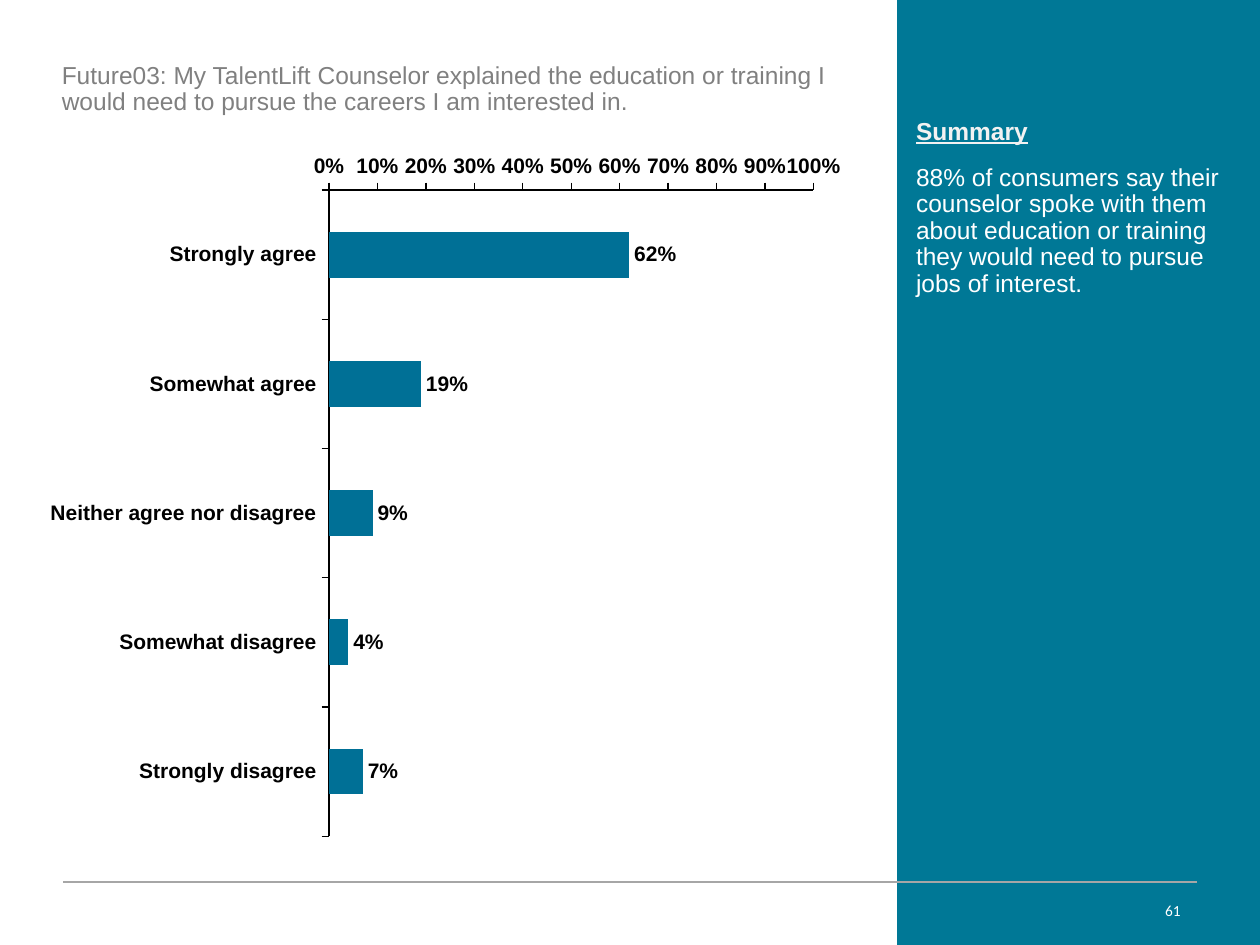
from lxml.etree import SubElement
from pptx import Presentation
from pptx.chart.data import CategoryChartData
from pptx.dml.color import RGBColor
from pptx.enum.chart import XL_CHART_TYPE, XL_LABEL_POSITION, XL_TICK_MARK
from pptx.enum.shapes import MSO_CONNECTOR, MSO_SHAPE
from pptx.enum.text import MSO_ANCHOR, MSO_AUTO_SIZE, PP_ALIGN
from pptx.oxml.ns import qn
from pptx.util import Inches, Pt

QUESTION = ("Future03: My TalentLift Counselor explained the education or training "
            "I would need to pursue the careers I am interested in.")
HEADING = "Summary"
SUMMARY = ("88% of consumers say their counselor spoke with them about education "
           "or training they would need to pursue jobs of interest.")
PAGE_NUMBER = "61"
ANSWERS = {
    "Strongly agree": 0.62,
    "Somewhat agree": 0.19,
    "Neither agree nor disagree": 0.09,
    "Somewhat disagree": 0.04,
    "Strongly disagree": 0.07,
}

TEAL = RGBColor(0x00, 0x78, 0x96)
BAR_BLUE = RGBColor(0x00, 0x70, 0x96)
GREY = RGBColor(0x80, 0x80, 0x80)
RULE_GREY = RGBColor(0xA6, 0xA6, 0xA6)
OFF_WHITE = RGBColor(0xF2, 0xF2, 0xF2)
WHITE = RGBColor(0xFF, 0xFF, 0xFF)
BLACK = RGBColor(0, 0, 0)

WIDTH, HEIGHT = 10, 7.5
MARGIN = 0.5
PANEL_LEFT = 7.12
PANEL_WIDTH = WIDTH - PANEL_LEFT
HEADING_TOP, HEADING_HEIGHT = 0.87, 0.39
CHART_TOP, CHART_RIGHT = 1.12, 6.8


def place(shape, left, top, width, height):
    shape.left, shape.top = Inches(left), Inches(top)
    shape.width, shape.height = Inches(width), Inches(height)


def write(shape, text, color, size=14, font_name="Arial", inset=0.1,
          anchor=MSO_ANCHOR.TOP, align=PP_ALIGN.LEFT, line_spacing=1):
    """Fill a shape with one formatted paragraph and return its run."""
    frame = shape.text_frame
    frame.text = text
    frame.word_wrap = True
    frame.auto_size = MSO_AUTO_SIZE.NONE
    frame.vertical_anchor = anchor
    frame.margin_left = frame.margin_right = Inches(inset)
    frame.margin_top = frame.margin_bottom = Inches(0.05)
    paragraph = frame.paragraphs[0]
    paragraph.alignment = align
    paragraph.line_spacing = line_spacing
    paragraph.space_before = Pt(0)
    run = paragraph.runs[0]
    run.font.name = font_name
    run.font.size = Pt(size)
    run.font.color.rgb = color
    return run


def format_chart_font(font):
    font.name = "Arial"
    font.size = Pt(12)
    font.bold = True
    font.color.rgb = BLACK


def add_answer_chart(slide):
    data = CategoryChartData(number_format="0%")
    data.categories = list(ANSWERS)
    data.add_series("Series 1", list(ANSWERS.values()))
    left = 0.27
    chart = slide.shapes.add_chart(
        XL_CHART_TYPE.BAR_CLUSTERED, Inches(left), Inches(CHART_TOP),
        Inches(CHART_RIGHT - left), Inches(5.63), data).chart
    chart.has_legend = False
    chart.has_title = False
    format_chart_font(chart.font)

    chart.category_axis.reverse_order = True
    chart.value_axis.minimum_scale = 0
    chart.value_axis.maximum_scale = 1
    chart.value_axis.major_unit = 0.1
    chart.value_axis.tick_labels.number_format = "0%"
    chart.value_axis.tick_labels.number_format_is_linked = False
    for axis in (chart.category_axis, chart.value_axis):
        axis.has_major_gridlines = False
        axis.major_tick_mark = XL_TICK_MARK.OUTSIDE
        axis.minor_tick_mark = XL_TICK_MARK.NONE
        axis.format.line.color.rgb = BLACK
        axis.format.line.width = Pt(0.75)
        format_chart_font(axis.tick_labels.font)

    plot = chart.plots[0]
    plot.gap_width = 182
    plot.vary_by_categories = False
    series = plot.series[0]
    series.format.fill.solid()
    series.format.fill.fore_color.rgb = BAR_BLUE
    labels = series.data_labels
    labels.show_value = True
    labels.position = XL_LABEL_POSITION.OUTSIDE_END
    labels.number_format = "0%"
    labels.number_format_is_linked = False
    format_chart_font(labels.font)


def add_panel(slide):
    """Add the side panel behind everything already on the slide."""
    panel = slide.shapes.add_shape(
        MSO_SHAPE.RECTANGLE, Inches(PANEL_LEFT), 0, Inches(PANEL_WIDTH), Inches(HEIGHT))
    panel.shadow.inherit = False
    panel.fill.solid()
    panel.fill.fore_color.rgb = TEAL
    panel.line.fill.background()
    slide.shapes.title.element.addprevious(panel.element)


def add_footer(slide):
    rule = slide.shapes.add_connector(
        MSO_CONNECTOR.STRAIGHT, Inches(MARGIN), Inches(7),
        Inches(WIDTH - MARGIN), Inches(7))
    rule.line.color.rgb = RULE_GREY
    rule.line.width = Pt(0.75)
    SubElement(rule.element.spPr, qn("a:effectLst"))

    number = slide.shapes.add_textbox(
        Inches(5.73), Inches(7.06), Inches(3.77), Inches(0.3))
    run = write(number, PAGE_NUMBER, WHITE, size=11, font_name="Calibri",
                inset=0.13, anchor=MSO_ANCHOR.MIDDLE, align=PP_ALIGN.RIGHT)
    run.font._element.set("cap", "small")


def main():
    presentation = Presentation()
    presentation.slide_width = Inches(WIDTH)
    presentation.slide_height = Inches(HEIGHT)
    slide = presentation.slides.add_slide(presentation.slide_layouts[1])

    title, body = slide.placeholders
    place(title, 0.39, 0.45, 6.41, CHART_TOP - 0.45)
    write(title, QUESTION, GREY, line_spacing=0.9)

    add_panel(slide)
    heading = slide.shapes.add_textbox(
        Inches(PANEL_LEFT), Inches(HEADING_TOP),
        Inches(PANEL_WIDTH), Inches(HEADING_HEIGHT))
    run = write(heading, HEADING, OFF_WHITE, inset=0.15)
    run.font.bold = True
    run.font.underline = True

    place(body, PANEL_LEFT, HEADING_TOP + HEADING_HEIGHT, PANEL_WIDTH, 2.46)
    write(body, SUMMARY, WHITE, inset=0.15, line_spacing=0.9)
    properties = body.text_frame.paragraphs[0]._p.get_or_add_pPr()
    properties.set("marL", "0")
    properties.set("indent", "0")
    SubElement(properties, qn("a:buNone"))

    add_answer_chart(slide)
    add_footer(slide)
    presentation.save("out.pptx")


if __name__ == "__main__":
    main()
